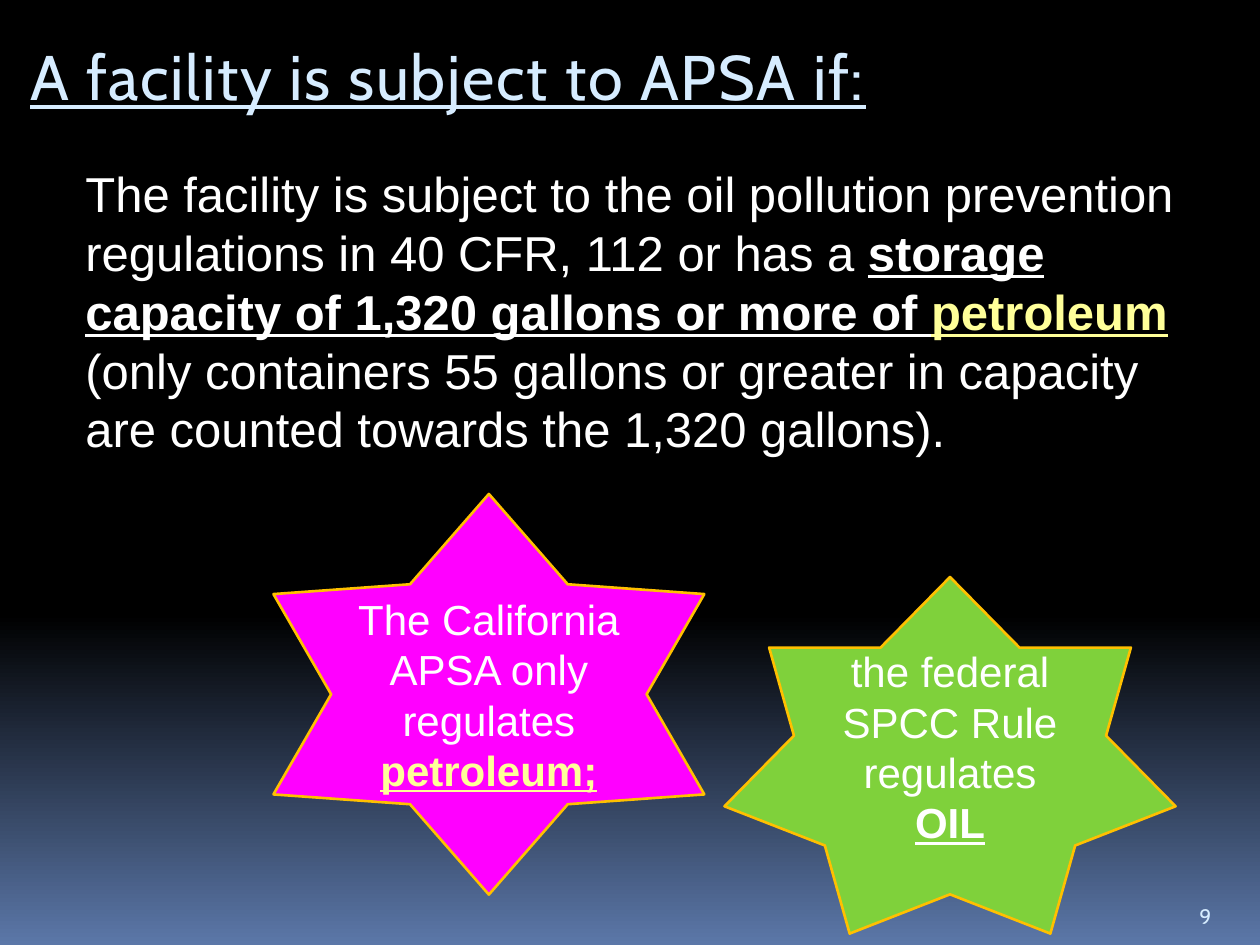
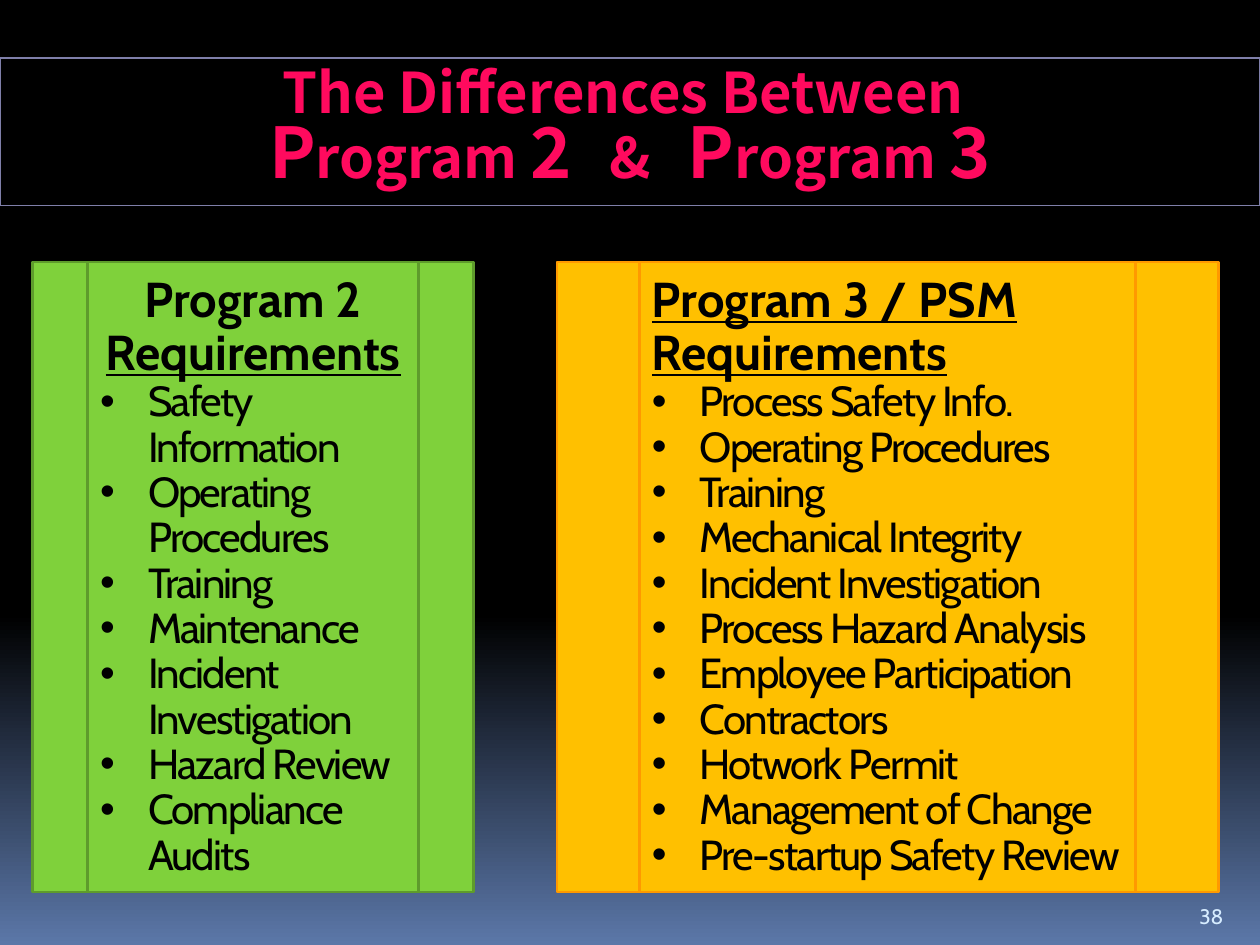
from copy import deepcopy

from pptx import Presentation
from pptx.dml.color import RGBColor
from pptx.enum.shapes import MSO_SHAPE as SHAPE
from pptx.enum.text import MSO_ANCHOR as ANCHOR, PP_ALIGN as ALIGN
from pptx.oxml import parse_xml
from pptx.oxml.ns import nsdecls
from pptx.util import Inches, Pt

# Shared look
BLACK, WHITE, ICE, SLATE = "000000", "FFFFFF", "D6ECFF", "5B77A8"
LEMON, GOLD, GREEN, PINK = "FFFF99", "FFC000", "7FD13B", "FF0A5E"
SANS, HEADING, GOTHIC = "Arial", "Cabin", "Noto Sans CJK KR"
STRONG = {"bold": True, "underline": True}


def hex_color(value):
    return RGBColor.from_string(value)


def add_span(para, text, style):
    """Add one run; style holds font values plus color and tracking."""
    span = para.add_run()
    span.text = text
    for name, value in style.items():
        if name == "color":
            span.font.color.rgb = hex_color(value)
        elif name == "tracking":
            span.font._element.set("spc", str(value * 100))
        else:
            setattr(span.font, name, value)


def fill_para(para, spans, base, **layout):
    """Write (text, changes) spans over a base style; "\n" breaks the line."""
    for name, value in layout.items():
        setattr(para, name, value)
    for text, changes in spans:
        if text == "\n":
            para.add_line_break()
        else:
            add_span(para, text, base | changes)


def set_frame(frame, **values):
    for name, value in ({"word_wrap": True} | values).items():
        setattr(frame, name, value)
    return frame.paragraphs[0]


def add_text(page, box, **frame_values):
    shape = page.shapes.add_textbox(*map(Inches, box))
    return set_frame(shape.text_frame, **frame_values)


def add_panel(page, kind, box, fill, line, width=1.5):
    shape = page.shapes.add_shape(kind, *map(Inches, box))
    shape.shadow.inherit = False
    if fill:
        shape.fill.solid()
        shape.fill.fore_color.rgb = hex_color(fill)
    else:
        shape.fill.background()
    shape.line.color.rgb = hex_color(line)
    shape.line.width = Pt(width)
    return shape


def add_page(deck, number):
    """Blank page with the night gradient and its page number."""
    page = deck.slides.add_slide(deck.slide_layouts[6])
    fill = page.background.fill
    fill.gradient()
    fill.gradient_angle = 270
    stop_list = page.element.xpath(".//a:gsLst")[0]
    stop_list.insert(0, deepcopy(stop_list[0]))
    stops = [(0, BLACK), (0.65, BLACK), (1, SLATE)]
    for stop, (position, color) in zip(fill.gradient_stops, stops):
        stop.position = position
        stop.color.rgb = hex_color(color)
    para = add_text(page, (9.42, 7.02, 0.5, 0.4), vertical_anchor=ANCHOR.BOTTOM)
    fill_para(para, [(number, {})],
              {"name": HEADING, "size": Pt(12), "color": ICE})
    return page


def add_star(page, kind, box, fill, spans):
    star = add_panel(page, kind, box, fill, GOLD)
    para = set_frame(star.text_frame, vertical_anchor=ANCHOR.MIDDLE)
    fill_para(para, spans, {"name": SANS, "size": Pt(24), "color": WHITE},
              alignment=ALIGN.CENTER)
    return star


def add_bullet(para):
    props = para._p.get_or_add_pPr()
    props.set("marL", str(Inches(0.38)))
    props.set("indent", str(-Inches(0.38)))
    for tag in (f'<a:buFont {nsdecls("a")} typeface="Arial"/>',
                f'<a:buChar {nsdecls("a")} char="•"/>'):
        props.append(parse_xml(tag))


def add_requirements(page, box, fill, line, heading, align, items):
    """Framed panel with a bold heading over a bulleted list."""
    panel = add_panel(page, SHAPE.FLOWCHART_PREDEFINED_PROCESS, box, fill, line)
    frame = panel.text_frame
    base = {"name": HEADING, "color": BLACK}
    fill_para(set_frame(frame, vertical_anchor=ANCHOR.MIDDLE), heading,
              base | {"size": Pt(28), "bold": True},
              alignment=align, line_spacing=0.9)
    for item in items:
        para = frame.add_paragraph()
        fill_para(para, [(item, {})], base | {"size": Pt(24), "tracking": -1},
                  alignment=ALIGN.LEFT, line_spacing=0.9)
        add_bullet(para)


def build_applicability(deck):
    page = add_page(deck, "9")

    # Rule text
    para = add_text(page, (0.58, 1.25, 8.83, 3), margin_right=Inches(0.05))
    fill_para(para, [
        ("The facility is subject to the oil pollution prevention regulations "
         "in 40 CFR, 112 or has a ", {}),
        ("storage capacity of 1,320 gallons or more of ", STRONG),
        ("petroleum", STRONG | {"color": LEMON}),
        (" (only containers 55 gallons or greater in capacity are counted "
         "towards the 1,320 gallons).", {}),
    ], {"name": SANS, "size": Pt(28), "color": WHITE})

    # Title
    para = add_text(page, (0.02, 0.25, 8.5, 0.69), margin_left=Inches(0.22))
    fill_para(para, [("A facility is subject to APSA if:", {})],
              {"name": HEADING, "size": Pt(36), "color": ICE,
               "underline": True, "tracking": 1})

    # State and federal stars
    state = add_star(page, SHAPE.STAR_6_POINT, (2.17, 3.92, 3.42, 3.18), "FF00FF", [
        ("The California APSA only regulates ", {}),
        ("petroleum;", STRONG | {"color": LEMON})])
    state.adjustments[0] = 0.317
    add_star(page, SHAPE.STAR_7_POINT, (5.75, 4.58, 3.58, 2.83), GREEN, [
        ("the federal SPCC Rule regulates ", {}), ("OIL", STRONG)])


def build_differences(deck):
    page = add_page(deck, "38")

    # Title band
    band = add_panel(page, SHAPE.RECTANGLE, (0, 0.46, 10, 1.17), None, "7F7FA9", 0.75)
    para = set_frame(band.text_frame, vertical_anchor=ANCHOR.TOP,
                     margin_top=Inches(0.1))
    large, gap = {"size": Pt(40)}, (" ", {"tracking": 14})
    program = [("P", large), ("rogram ", {})]
    fill_para(para, [("The Differences Between ", {}), ("\n", {}),
                     *program, ("2", large), gap, ("&", {}), gap,
                     *program, ("3", large)],
              {"name": GOTHIC, "size": Pt(32), "bold": True, "color": PINK},
              alignment=ALIGN.CENTER, line_spacing=0.8)

    # Requirement panels
    underlined = {"underline": True}
    top, height = 2.08, 5
    add_requirements(
        page, (0.26, top, 3.5, height), GREEN, "5E9B2C",
        [("Program 2 ", {}), ("Requirements", underlined)], ALIGN.CENTER,
        ["Safety Information", "Operating Procedures", "Training",
         "Maintenance", "Incident Investigation", "Hazard Review",
         "Compliance Audits"])
    add_requirements(
        page, (4.42, top, 5.25, height), GOLD, "FF9900",
        [("Program 3 / PSM Requirements", underlined)], ALIGN.LEFT,
        ["Process Safety Info.", "Operating Procedures", "Training",
         "Mechanical Integrity", "Incident Investigation",
         "Process Hazard Analysis", "Employee Participation", "Contractors",
         "Hotwork Permit", "Management of Change",
         "Pre-startup Safety Review"])


def main():
    deck = Presentation()
    deck.slide_width, deck.slide_height = Inches(10), Inches(7.5)
    build_applicability(deck)
    build_differences(deck)
    deck.save("out.pptx")


if __name__ == "__main__":
    main()
